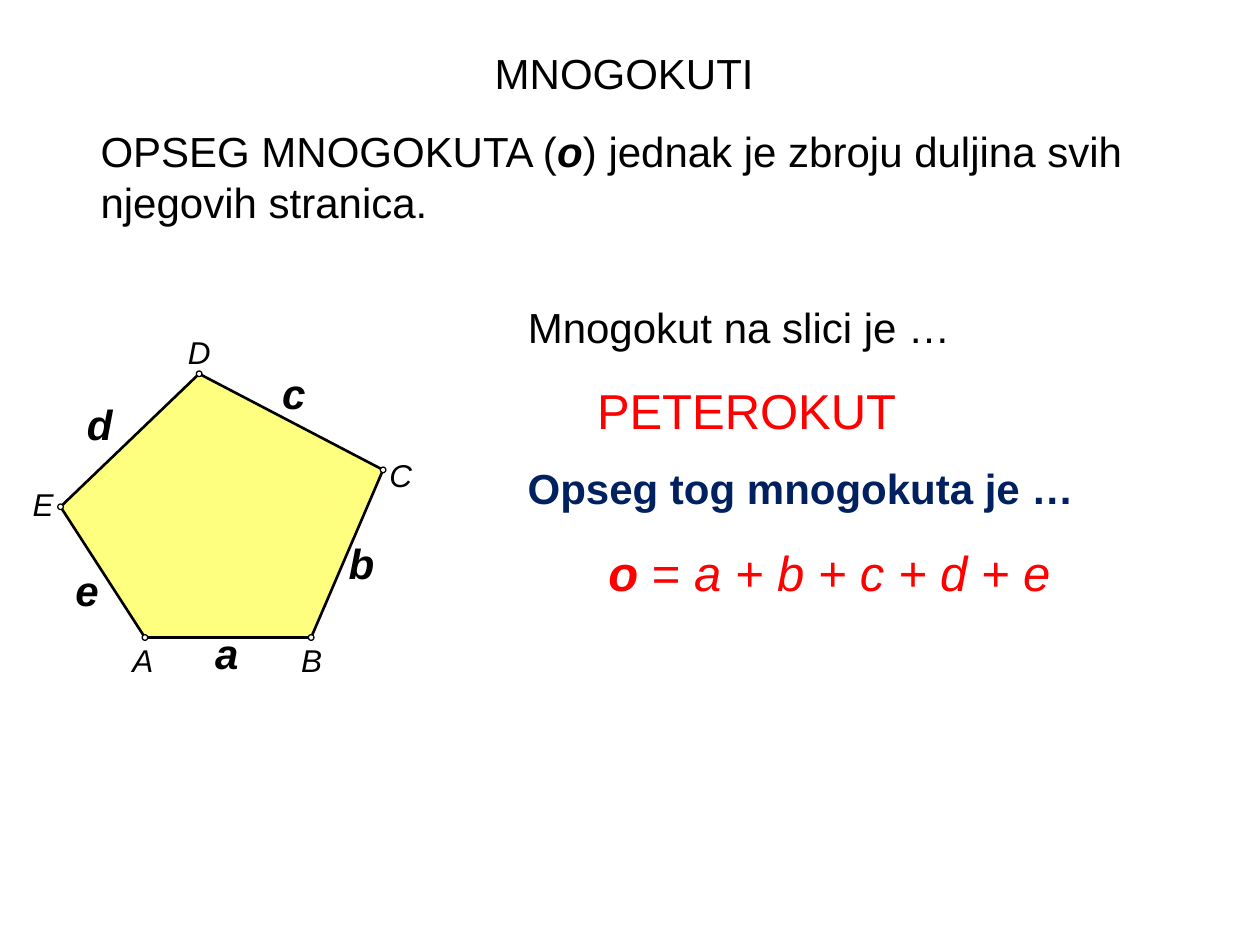
from lxml import etree
from pptx import Presentation
from pptx.dml.color import RGBColor
from pptx.enum.shapes import MSO_CONNECTOR, MSO_SHAPE
from pptx.enum.text import MSO_AUTO_SIZE, PP_ALIGN
from pptx.oxml.ns import qn
from pptx.util import Pt

STRAIGHT, ELLIPSE = MSO_CONNECTOR.STRAIGHT, MSO_SHAPE.OVAL
LEFT, CENTER = PP_ALIGN.LEFT, PP_ALIGN.CENTER
GROW = MSO_AUTO_SIZE.SHAPE_TO_FIT_TEXT

COLORS = {"black": "000000", "white": "FFFFFF", "yellow": "FFFF00",
          "navy": "002060", "red": "FF0000"}
FONT = "Arial"
MARKER = 3.2
BOLD, ITALIC = {"bold": True}, {"italic": True}
BOLD_ITALIC = {**BOLD, **ITALIC}

# Vertex: (point, top left of its label)
VERTICES = {
    "A": ((82.8, 364.3), (75.6, 366.5)),
    "B": ((177.8, 364.3), (172.1, 366.5)),
    "C": ((218.9, 268.5), (222.5, 260.6)),
    "D": ((113.8, 213.6), (107.3, 190.1)),
    "E": ((34.6, 289.6), (18.7, 277.2)),
}
TRIANGLES = ["ADE", "ACD", "ABC"]
SIDES = ["AB", "BC", "CD", "DE", "EA"]
SIDE_LABELS = {"a": (115.9, 355), "b": (192.2, 303.8), "c": (154.1, 206.6),
               "d": (42.5, 223.9), "e": (36, 319)}

# Left, top, width, height, size, colour, alignment, spans
TEXTS = [
    (103.7, 23.8, 512.6, 36, 24, "black", CENTER, [("MNOGOKUTI ", {})]),
    (50.4, 68.4, 663.8, 65.5, 24, "black", LEFT,
     [("OPSEG MNOGOKUTA (", {}), ("o", BOLD_ITALIC),
      (") jednak je zbroju duljina svih njegovih stranica.", {})]),
    (294.5, 168.5, 425, 36, 24, "black", LEFT, [("Mnogokut na slici je …", {})]),
    (294.5, 260.6, 345.6, 36, 24, "navy", LEFT, [("Opseg tog mnogokuta je …", BOLD)]),
    (334.1, 213.8, 385, 41, 28, "red", LEFT, [("PETEROKUT", {})]),
    (340.6, 306.7, 379, 41, 28, "red", LEFT,
     [("o ", BOLD_ITALIC), ("= ", {}), ("a + b + c + d + e", ITALIC)]),
]


def color(name):
    return RGBColor.from_string(COLORS[name])


def point(vertex):
    x, y = VERTICES[vertex][0]
    return Pt(x), Pt(y)


def add_text(slide, left, top, width, height, size, color_name, align, spans,
             wrap=True, margin=None):
    box = slide.shapes.add_textbox(Pt(left), Pt(top), Pt(width), Pt(height))
    frame = box.text_frame
    frame.word_wrap = wrap
    frame.auto_size = GROW
    if margin is not None:
        for side in ("left", "top", "right", "bottom"):
            setattr(frame, f"margin_{side}", Pt(margin))
    para = frame.paragraphs[0]
    para.alignment = align
    for text, style in spans:
        span = para.add_run()
        span.text = text
        span.font.color.rgb = color(color_name)
        for name, value in {"name": FONT, "size": Pt(size), **style}.items():
            setattr(span.font, name, value)


def add_triangle(slide, corners):
    first, *others = [point(vertex) for vertex in corners]
    builder = slide.shapes.build_freeform(*first)
    builder.add_line_segments(others, close=True)
    triangle = builder.convert_to_shape()
    triangle.shadow.inherit = False
    triangle.line.fill.background()
    triangle.fill.solid()
    triangle.fill.fore_color.rgb = color("yellow")
    tint = triangle.fill._xPr.find(f".//{qn('a:srgbClr')}")
    etree.SubElement(tint, qn("a:alpha"), val="50000")


def add_side(slide, ends):
    side = slide.shapes.add_connector(STRAIGHT, *point(ends[0]), *point(ends[1]))
    side.line.color.rgb = color("black")
    side.line.width = Pt(1.5)
    etree.SubElement(side._element.spPr, qn("a:effectLst"))


def add_marker(slide, vertex):
    x, y = VERTICES[vertex][0]
    marker = slide.shapes.add_shape(ELLIPSE, Pt(x - MARKER / 2), Pt(y - MARKER / 2),
                                    Pt(MARKER), Pt(MARKER))
    marker.shadow.inherit = False
    marker.fill.solid()
    marker.fill.fore_color.rgb = color("white")
    marker.line.color.rgb = color("black")
    marker.line.width = Pt(0)


def main():
    deck = Presentation()
    deck.slide_width, deck.slide_height = Pt(720), Pt(540)
    slide = deck.slides.add_slide(deck.slide_layouts[6])
    for corners in TRIANGLES:
        add_triangle(slide, corners)
    for ends in SIDES:
        add_side(slide, ends)
    for vertex in VERTICES:
        add_marker(slide, vertex)
    for vertex, (_, corner) in VERTICES.items():
        add_text(slide, *corner, 12.6, 21.6, 18, "black", LEFT, [(vertex, ITALIC)],
                 wrap=False, margin=0)
    for side, corner in SIDE_LABELS.items():
        add_text(slide, *corner, 26, 36, 24, "black", LEFT, [(side, BOLD_ITALIC)])
    for text in TEXTS:
        add_text(slide, *text)
    deck.save("out.pptx")


if __name__ == "__main__":
    main()
